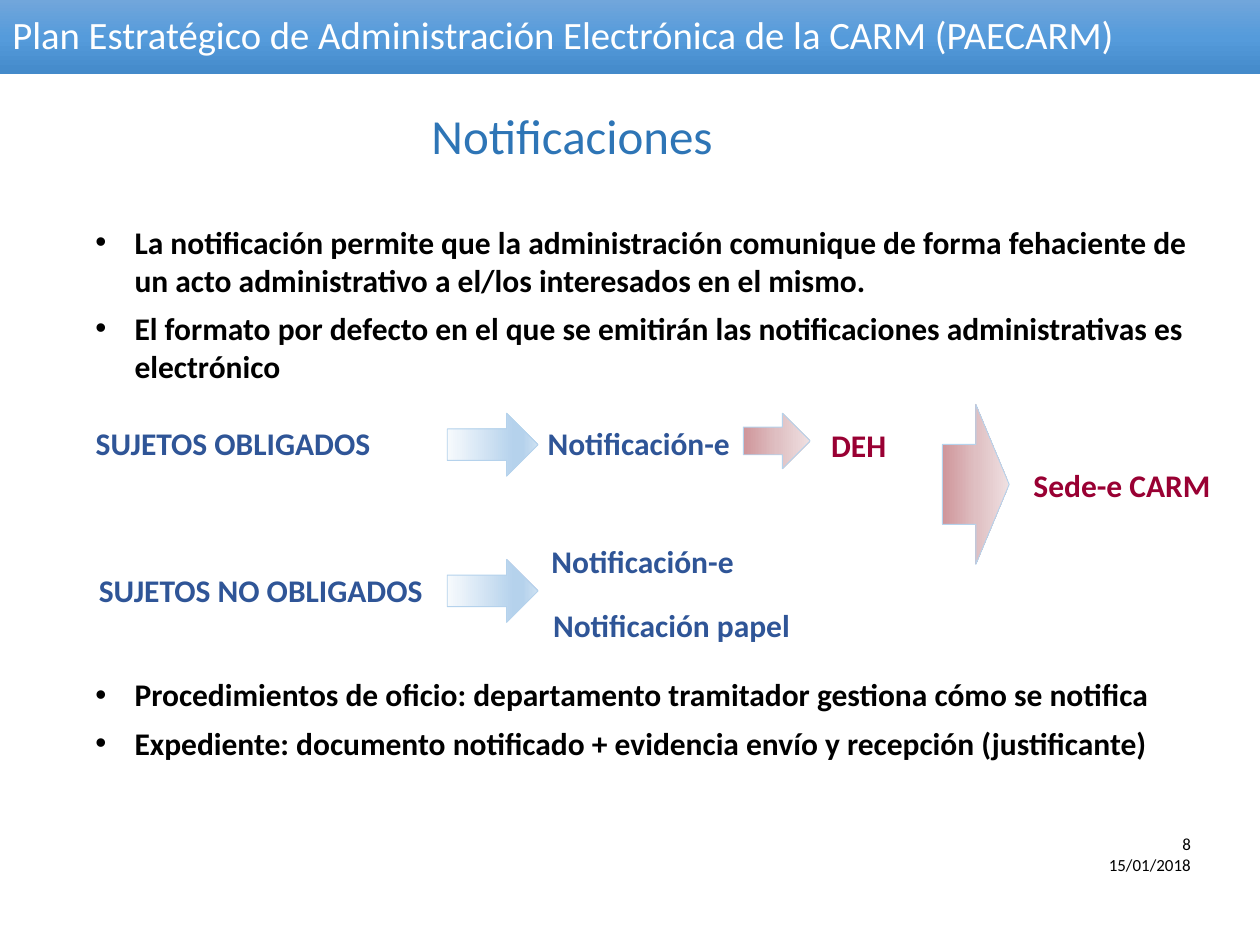
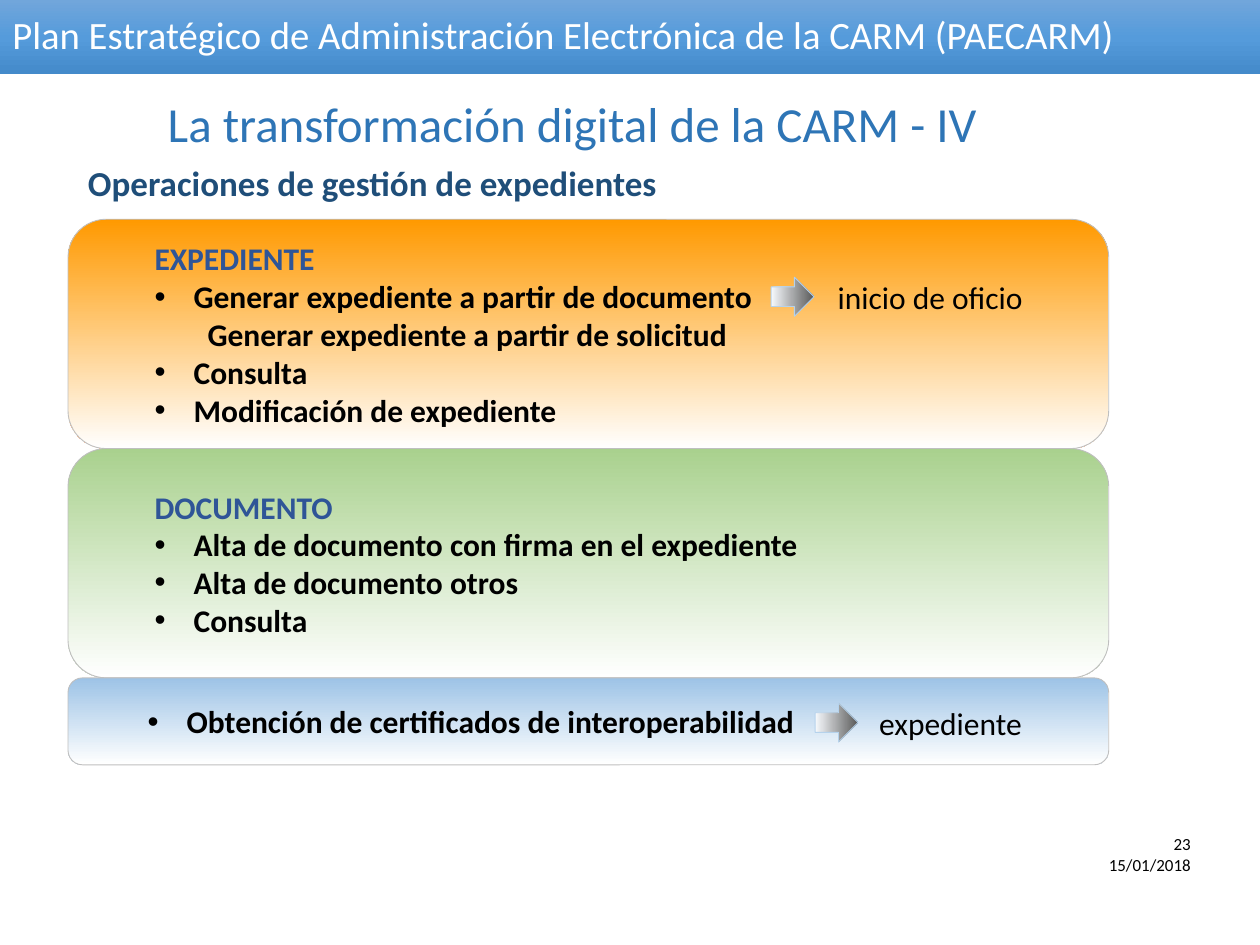
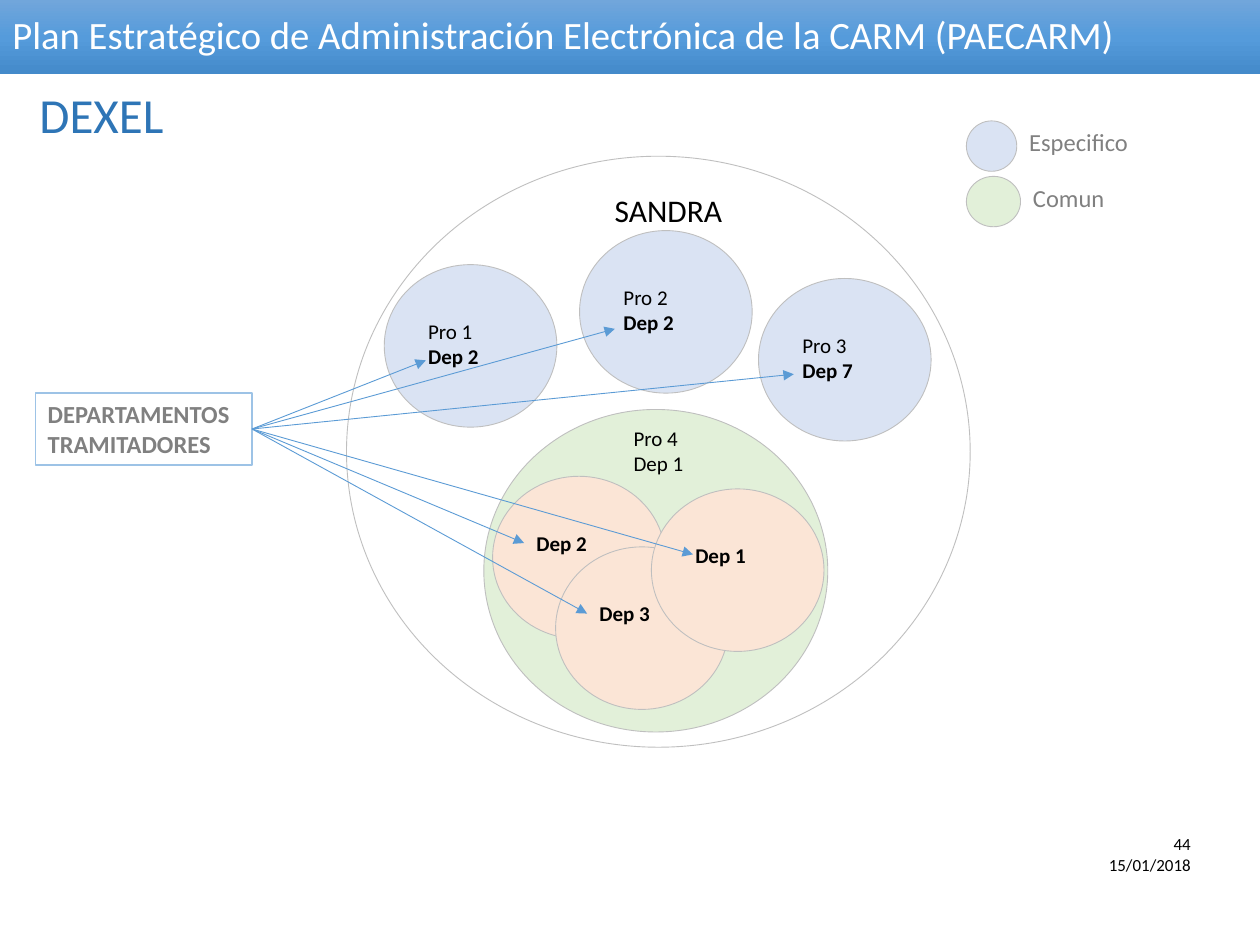
"""Builds three slides on electronic notifications, case files and departments."""
from lxml.etree import SubElement
from pptx import Presentation
from pptx.dml.color import RGBColor
from pptx.enum.shapes import MSO_CONNECTOR, MSO_SHAPE
from pptx.enum.text import MSO_ANCHOR, PP_ALIGN
from pptx.oxml.ns import qn
from pptx.util import Inches, Pt

rgb = RGBColor.from_string
BLACK, WHITE, NAVY, WINE = "000000", "FFFFFF", "2F5597", "990033"
GREY, EDGE, SKY = "808080", "BFBFBF", "B5D2EC"
BLUE, GREEN, PEACH = "DAE3F3", "E2F0D9", "FBE5D6"
BAND = [(0, "71A6DB"), (50, "559BDB"), (100, "448ACA")]
ICE = [(0, "F7FAFD"), (74, SKY), (83, SKY), (100, "CEE1F2")]
ROSE = [(0, "CF959A"), (50, "DFBFC2"), (100, "EFE0E1")]
STEEL = [(0, "F7FAFD"), (100, "595959")]
HEADING = {"size": Pt(28), "color": "2E75B6"}
BOLD = {"size": Pt(18), "bold": True}
CENTER = {"alignment": PP_ALIGN.CENTER}
OVAL, ARROW, RECT, ROUND = (MSO_SHAPE.OVAL, MSO_SHAPE.RIGHT_ARROW,
                            MSO_SHAPE.RECTANGLE, MSO_SHAPE.ROUNDED_RECTANGLE)


def shape(s, kind, at, fill=None, line=None, weight=0.5, angle=270):
    """Adds a preset shape; a list of stops as fill makes a gradient."""
    sp = s.shapes.add_shape(kind, *map(Inches, at))
    sp.shadow.inherit = False
    if isinstance(fill, list):
        sp.fill.gradient()
        sp.fill.gradient_angle = angle
        stops = sp._element.spPr.find(".//" + qn("a:gsLst"))
        for old in list(stops):
            stops.remove(old)
        for pos, color in fill:
            gs = SubElement(stops, qn("a:gs"), pos=str(pos * 1000))
            SubElement(gs, qn("a:srgbClr"), val=color)
    elif fill:
        sp.fill.solid()
        sp.fill.fore_color.rgb = rgb(fill)
    else:
        sp.fill.background()
    if line:
        sp.line.color.rgb = rgb(line)
        sp.line.width = Pt(weight)
    else:
        sp.line.fill.background()
    return sp


def write(s, target, paras, font, para=None, anchor=MSO_ANCHOR.TOP):
    """Writes (text, margin, hang, font changes) paragraphs into a shape or a new box."""
    if isinstance(target, tuple):
        target = s.shapes.add_textbox(*map(Inches, target))
    tf = target.text_frame
    tf.word_wrap = True
    tf.vertical_anchor = anchor
    for i, (text, margin, hang, changes) in enumerate(paras):
        p = tf.paragraphs[0] if i == 0 else tf.add_paragraph()
        pPr = p._p.get_or_add_pPr()
        if margin:
            pPr.set("marL", str(Inches(margin)))
            pPr.set("indent", str(-Inches(hang)))
        if hang:
            SubElement(pPr, qn("a:buFont"), typeface="Arial")
            SubElement(pPr, qn("a:buChar"), char="•")
        for name, value in {"alignment": PP_ALIGN.LEFT, **(para or {})}.items():
            setattr(p, name, value)
        r = p.add_run()
        r.text = text
        for name, value in {"name": "Calibri", "color": BLACK, **font, **changes}.items():
            if name == "color":
                r.font.color.rgb = rgb(value)
            else:
                setattr(r.font, name, value)


prs = Presentation()
prs.slide_width, prs.slide_height = Inches(10), Inches(7.5)
slides = []
for number, title, at in [
    ("8", "Notificaciones", (1.05, 0.79, 6.98, 0.63)),
    ("23", "La transformación digital de la CARM - IV", (1.05, 0.69, 6.98, 0.63)),
    ("44", "DEXEL", (0.05, 0.62, 1.51, 0.63)),
]:
    s = prs.slides.add_slide(prs.slide_layouts[6])
    slides.append(s)
    band = shape(s, RECT, (0, 0, 10, 0.59), BAND)
    write(s, band, [("Plan Estratégico de Administración Electrónica de la CARM (PAECARM)", 0, 0, {})],
          {"size": Pt(22.1), "color": WHITE}, {"line_spacing": 0.9}, MSO_ANCHOR.MIDDLE)
    write(s, at, [(title, 0, 0, {})], HEADING, CENTER)
    write(s, (7.78, 6.57, 1.77, 0.43), [(number, 0, 0, {}), ("15/01/2018", 0, 0, {})],
          {"size": Pt(9.7)}, {"alignment": PP_ALIGN.RIGHT})

s = slides[0]
for top, texts in [
    (1.72, ["La notificación permite que la administración comunique de forma fehaciente de "
            "un acto administrativo a el/los interesados en el mismo.",
            "El formato por defecto en el que se emitirán las notificaciones administrativas es "
            "electrónico"]),
    (5.31, ["Procedimientos de oficio: departamento tramitador gestiona cómo se notifica",
            "Expediente: documento notificado + evidencia envío y recepción (justificante)"]),
]:
    write(s, (0.16, top, 9.54, 1), [(text, 0.81, 0.31, {}) for text in texts],
          BOLD, {"space_after": Pt(6)})
for at, stops in [
    ((3.55, 3.28, 0.72, 0.5), ICE),
    ((3.55, 4.44, 0.72, 0.5), ICE),
    ((5.9, 3.28, 0.53, 0.44), ROSE),
    ((7.48, 3.21, 0.53, 1.27), ROSE),
]:
    shape(s, ARROW, at, stops, SKY, angle=0)
for text, left, top, width, color in [
    ("SUJETOS OBLIGADOS", 0.65, 3.32, 2.4, NAVY),
    ("Notificación-e", 3.97, 3.32, 2.2, NAVY),
    ("DEH", 6.44, 3.33, 0.75, WINE),
    ("Sede-e CARM", 8.07, 3.65, 1.67, WINE),
    ("SUJETOS NO OBLIGADOS", 0.66, 4.48, 2.82, NAVY),
    ("Notificación-e", 4, 4.25, 2.2, NAVY),
    ("Notificación papel", 4.13, 4.76, 2.4, NAVY),
]:
    write(s, (left, top, width, 0.4), [(text, 0, 0, {"color": color})], BOLD, CENTER)

s = slides[1]
write(s, (0.1, 1.23, 6.94, 0.44), [("Operaciones de gestión de expedientes", 0.5, 0, {})],
      {"size": Pt(20), "bold": True, "color": "1F4E79"})
for top, height, color, paras in [
    (1.74, 1.82, "FF9900", [
        ("EXPEDIENTE", 0.5, 0, {"color": NAVY}),
        ("Generar expediente a partir de documento", 0.81, 0.31, {}),
        ("Generar expediente a partir de solicitud", 0.92, 0, {}),
        ("Consulta", 0.81, 0.31, {}),
        ("Modificación de expediente", 0.81, 0.31, {})]),
    (3.56, 1.82, "A9D18E", [
        ("DOCUMENTO", 0.5, 0, {"color": NAVY}),
        ("Alta de documento con firma en el expediente", 0.81, 0.31, {}),
        ("Alta de documento otros", 0.81, 0.31, {}),
        ("Consulta", 0.81, 0.31, {})]),
    (5.38, 0.69, "9DC3E6", [
        ("Obtención de certificados de interoperabilidad", 0.81, 0.31, {})]),
]:
    panel = shape(s, ROUND, (0.54, top, 8.26, height), [(0, color), (100, WHITE)], EDGE)
    write(s, panel, paras, BOLD, anchor=MSO_ANCHOR.MIDDLE)
for text, left, arrow_left, middle in [
    ("inicio de oficio", 6.55, 6.12, 2.36),
    ("expediente", 6.88, 6.47, 5.74),
]:
    shape(s, ARROW, (arrow_left, middle - 0.16, 0.34, 0.31), STEEL, SKY, angle=0)
    write(s, (left, middle - 0.2, 1.8, 0.4), [(text, 0, 0, {})], {"size": Pt(18)})

s = slides[2]
shape(s, OVAL, (2.75, 1.24, 4.95, 4.69), line=EDGE)
write(s, (4.78, 1.47, 1.06, 0.4), [("SANDRA", 0, 0, {})], {"size": Pt(18)})
shape(s, OVAL, (3.84, 3.25, 2.73, 2.56), GREEN, EDGE)
write(s, (4.93, 3.33, 0.81, 0.5), [("Pro 4", 0, 0, {}), ("Dep 1", 0, 0, {})], {"size": Pt(12)})
for left, top, color, process, department in [
    (3.05, 2.1, BLUE, "Pro 1", "Dep 2"),
    (6.02, 2.21, BLUE, "Pro 3", "Dep 7"),
    (4.6, 1.83, BLUE, "Pro 2", "Dep 2"),
    (3.91, 3.78, PEACH, None, "Dep 2"),
    (4.41, 4.34, PEACH, None, "Dep 3"),
    (5.17, 3.88, PEACH, None, "Dep 1"),
]:
    shape(s, OVAL, (left, top, 1.37, 1.29), color, EDGE)
    paras = [(process, 0, 0, {})] if process else []
    write(s, (left + 0.25, top + 0.38, 0.87, 0.5), paras + [(department, 0, 0, {"bold": True})],
          {"size": Pt(12)})

departments = shape(s, RECT, (0.28, 3.12, 1.72, 0.57), line="9DC3E6", weight=0.75)
write(s, departments, [("DEPARTAMENTOS", 0, 0, {}), ("TRAMITADORES", 0, 0, {})],
      {"size": Pt(14), "bold": True, "color": GREY})
for x, y in [(3.38, 2.86), (5.5, 4.4), (4.88, 2.61), (6.3, 2.97), (4.16, 4.31), (4.66, 4.87)]:
    c = s.shapes.add_connector(MSO_CONNECTOR.STRAIGHT, Inches(2), Inches(3.41), Inches(x), Inches(y))
    c.begin_connect(departments, 3)
    c.line.color.rgb = rgb("5B9BD5")
    c.line.width = Pt(0.5)
    SubElement(c.line._get_or_add_ln(), qn("a:tailEnd"), type="triangle")
    SubElement(c._element.spPr, qn("a:effectLst"))

for text, top, width, color, left in [
    ("Especifico", 0.96, 0.4, BLUE, 8.07),
    ("Comun", 1.4, 0.43, GREEN, 8.1),
]:
    shape(s, OVAL, (7.67, top, width, 0.4), color, EDGE)
    write(s, (left, top, 1.1, 0.34), [(text, 0, 0, {})], {"size": Pt(14), "color": GREY})

prs.save("out.pptx")
